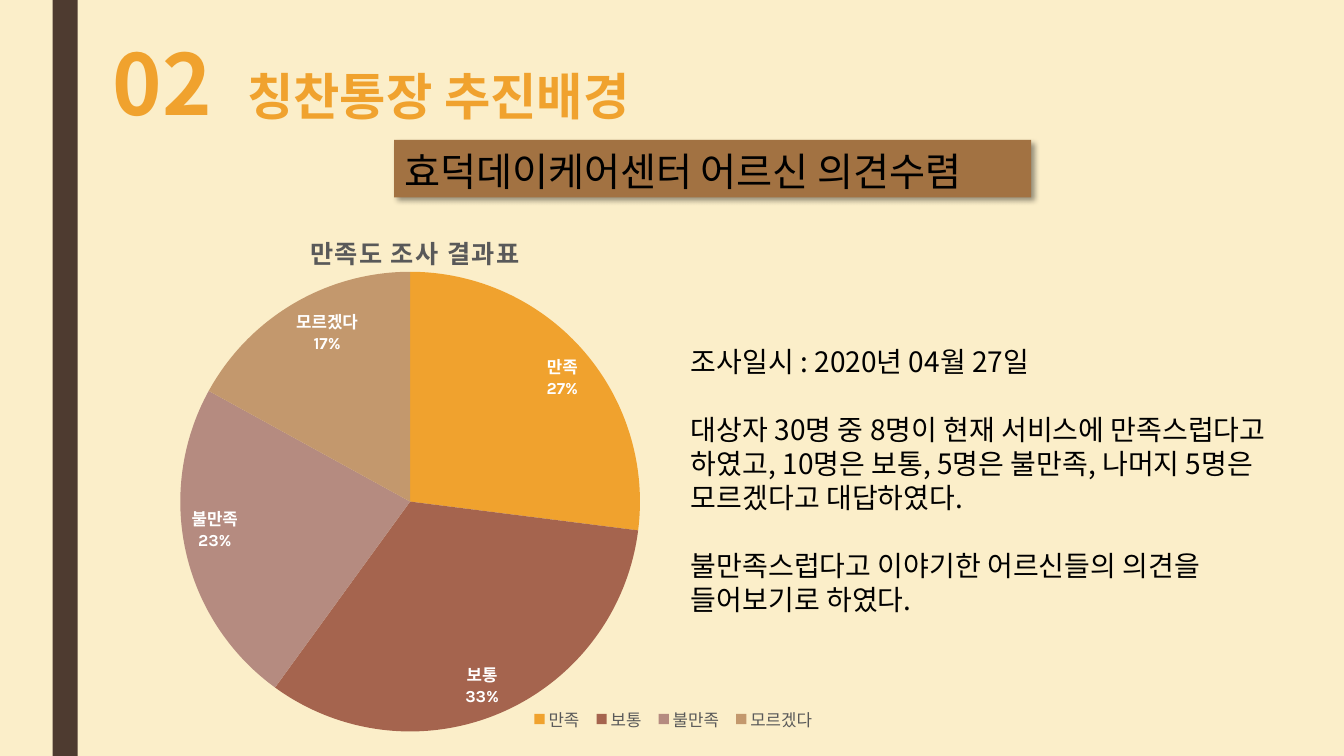
from dataclasses import dataclass

from lxml.etree import SubElement
from pptx import Presentation
from pptx.chart.data import CategoryChartData
from pptx.dml.color import RGBColor
from pptx.enum.chart import XL_CHART_TYPE, XL_LABEL_POSITION, XL_LEGEND_POSITION
from pptx.enum.shapes import MSO_SHAPE
from pptx.oxml import parse_xml
from pptx.oxml.ns import nsdecls, qn
from pptx.util import Pt


@dataclass(frozen=True)
class Theme:
    background: str = "FBEEC9"
    sidebar: str = "4E3B30"
    banner: str = "A27242"
    accent: str = "F0A22E"
    ink: str = "000000"
    muted: str = "595959"
    label: str = "FFFFFF"
    slices: tuple = ("F0A22E", "A5644E", "B58B80", "C3986D")
    text_font: str = "Noto Sans CJK KR"
    chart_font: str = "Karla"
    number_size: int = 60
    title_size: int = 36
    banner_size: int = 28
    body_size: int = 20
    chart_title_size: int = 18
    chart_size: int = 12
    line_height: float = 1.21


THEME = Theme()
SURVEY = {"만족": 27, "보통": 33, "불만족": 23, "모르겠다": 17}
FINDINGS = (
    "조사일시 : 2020년 04월 27일",
    "대상자 30명 중 8명이 현재 서비스에 만족스럽다고 하였고, 10명은 보통, "
    "5명은 불만족, 나머지 5명은 모르겠다고 대답하였다.",
    "불만족스럽다고 이야기한 어르신들의 의견을 들어보기로 하였다.",
)


def style_font(font, size, color, bold=False, name=THEME.text_font):
    font.size, font.bold, font.name = Pt(size), bold, name
    font.color.rgb = RGBColor.from_string(color)


def style_run(run, size, color, bold=False):
    style_font(run.font, size, color, bold)
    SubElement(run._r.get_or_add_rPr(), qn("a:ea"), typeface=THEME.text_font)


def prepare_frame(frame, size):
    """Wrap the text and lower the first baseline in proportion to its size."""
    frame.word_wrap = True
    frame.margin_top = Pt(3.6 + 0.08 * size)


def add_rectangle(slide, box, color):
    rectangle = slide.shapes.add_shape(MSO_SHAPE.RECTANGLE, *map(Pt, box))
    rectangle.shadow.inherit = False
    rectangle.fill.solid()
    rectangle.fill.fore_color.rgb = RGBColor.from_string(color)
    rectangle.line.fill.background()
    return rectangle


def add_heading(slide, box, number, title):
    frame = slide.shapes.add_textbox(*map(Pt, box)).text_frame
    prepare_frame(frame, THEME.number_size)
    heading = frame.paragraphs[0]
    heading.line_spacing = Pt(THEME.number_size * THEME.line_height)
    tabs = SubElement(heading._p.get_or_add_pPr(), qn("a:tabLst"))
    SubElement(tabs, qn("a:tab"), pos=str(Pt(96)), algn="l")
    for text, size in ((number + "\t", THEME.number_size), (title, THEME.title_size)):
        run = heading.add_run()
        run.text = text
        style_run(run, size, THEME.accent, bold=True)


def add_paragraphs(frame, texts, size):
    """Fill a frame with paragraphs set one line apart."""
    prepare_frame(frame, size)
    frame.text = "\n".join(texts)
    pitch = Pt(size * THEME.line_height)
    for index, paragraph in enumerate(frame.paragraphs):
        paragraph.line_spacing = pitch
        if index:
            paragraph.space_before = pitch
        style_run(paragraph.runs[0], size, THEME.ink)


def add_banner(slide, box, text):
    banner = add_rectangle(slide, box, THEME.banner)
    effects = banner._element.spPr.find(qn("a:effectLst"))
    shadow = SubElement(effects, qn("a:outerShdw"), blurRad=str(Pt(4)), dist=str(Pt(3)),
                        dir="2700000", algn="tl", rotWithShape="0")
    color = SubElement(shadow, qn("a:srgbClr"), val=THEME.ink)
    SubElement(color, qn("a:alpha"), val="40000")
    add_paragraphs(banner.text_frame, [text], THEME.banner_size)
    banner.text_frame.paragraphs[0].alignment = 1


def place(element, index, target="", **fractions):
    """Give a chart part a manual layout in fractions of the chart area."""
    for old in element.findall(qn("c:layout")):
        element.remove(old)
    layout = parse_xml(f"<c:layout {nsdecls('c')}><c:manualLayout/></c:layout>")
    manual = layout[0]
    if target:
        SubElement(manual, qn("c:layoutTarget"), val=target)
    for axis in "xy":
        SubElement(manual, qn(f"c:{axis}Mode"), val="edge")
    for key, value in fractions.items():
        SubElement(manual, qn(f"c:{key}"), val=str(value))
    element.insert(index, layout)


def add_survey_pie(slide, box, title, survey):
    data = CategoryChartData()
    data.categories = list(survey)
    data.add_series("Series 1", list(survey.values()))
    chart = slide.shapes.add_chart(XL_CHART_TYPE.PIE, *map(Pt, box), data).chart
    style_font(chart.font, THEME.chart_size, THEME.ink, name=THEME.chart_font)

    chart.has_title = True
    chart.chart_title.text_frame.text = title
    title_run = chart.chart_title.text_frame.paragraphs[0].runs[0]
    style_font(title_run.font, THEME.chart_title_size, THEME.muted, True, THEME.chart_font)
    title_run._r.get_or_add_rPr().set("spc", "100")
    place(chart.chart_title._element, 1, x=0.38, y=0.02)

    chart.has_legend = True
    chart.legend.position = XL_LEGEND_POSITION.TOP
    chart.legend.include_in_layout = False
    style_font(chart.legend.font, THEME.chart_size, THEME.muted, name=THEME.chart_font)
    place(chart.legend._element, 1, x=0.64, y=0.89, w=0.36, h=0.05)

    pie = chart.plots[0]
    pie.vary_by_categories = True
    place(chart._chartSpace.chart.plotArea, 0, "inner", x=0.23, y=0.1, w=0.55, h=0.84)
    for index, color in enumerate(THEME.slices):
        point = pie.series[0].points[index].format
        point.fill.solid()
        point.fill.fore_color.rgb = RGBColor.from_string(color)
        point.line.fill.background()

    labels = pie.series[0].data_labels
    labels.show_value = False
    labels.show_category_name = labels.show_percentage = True
    labels.number_format, labels.number_format_is_linked = "0%", False
    labels.position = XL_LABEL_POSITION.INSIDE_END
    style_font(labels.font, THEME.chart_size, THEME.label, True, THEME.chart_font)
    separator = parse_xml(f"<c:separator {nsdecls('c')}>\n</c:separator>")
    labels._element.find(qn("c:showBubbleSize")).addnext(separator)


def main():
    deck = Presentation()
    deck.slide_width, deck.slide_height = Pt(960), Pt(540)
    slide = deck.slides.add_slide(deck.slide_layouts[6])
    slide.background.fill.solid()
    slide.background.fill.fore_color.rgb = RGBColor.from_string(THEME.background)

    add_rectangle(slide, (37.5, 0, 18, 540), THEME.sidebar)
    add_heading(slide, (73.5, 13.5, 399, 80), "02", "칭찬통장 추진배경")
    add_banner(slide, (281.5, 100, 455, 41), "효덕데이케어센터 어르신 의견수렴")
    add_survey_pie(slide, (-8.5, 154, 597, 393), "만족도 조사 결과표", SURVEY)
    findings = slide.shapes.add_textbox(Pt(486.5), Pt(241), Pt(460), Pt(225))
    add_paragraphs(findings.text_frame, FINDINGS, THEME.body_size)
    deck.save("out.pptx")


if __name__ == "__main__":
    main()
